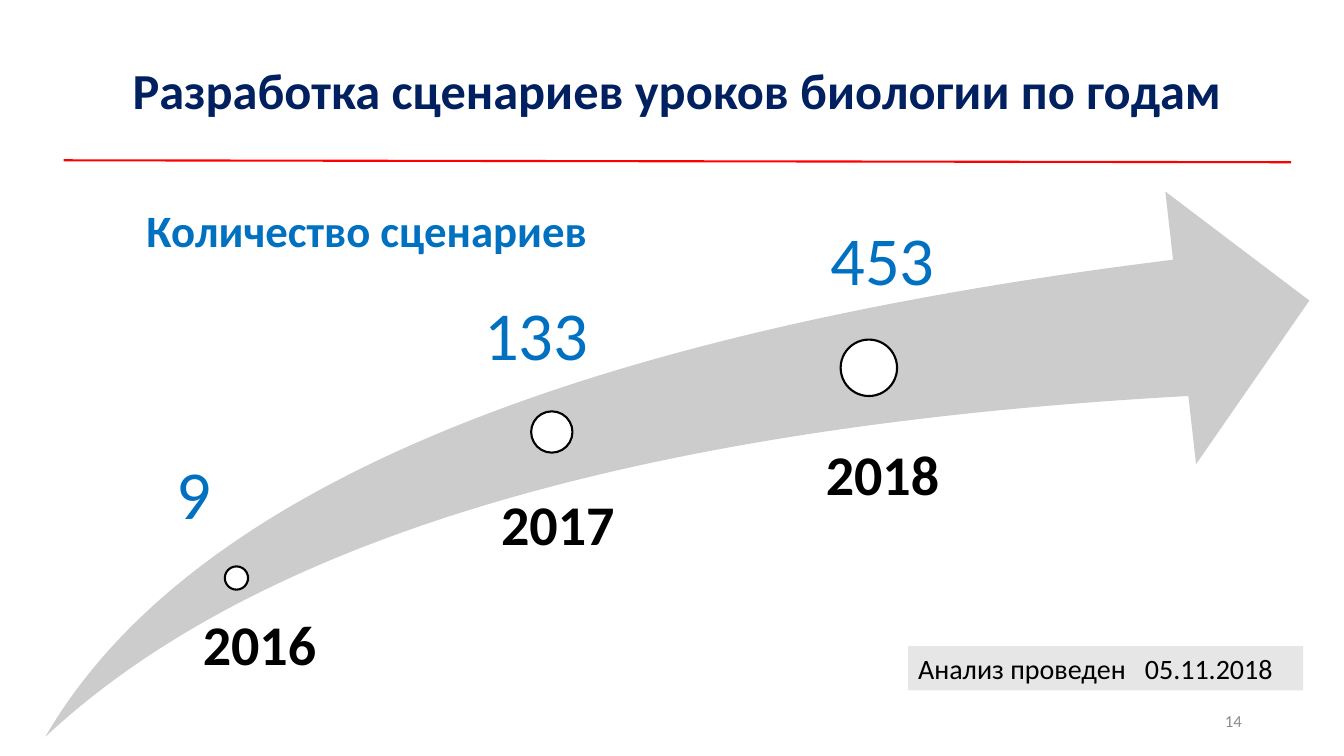
from dataclasses import dataclass

import pptx
import pptx.dml.color
import pptx.enum.shapes
import pptx.enum.text
import pptx.oxml.ns
import pptx.slide
import pptx.text.text
import pptx.util
from lxml import etree

Pt = pptx.util.Pt
RGB = pptx.dml.color.RGBColor
Shape = pptx.enum.shapes.MSO_SHAPE
Align = pptx.enum.text.PP_ALIGN
Anchor = pptx.enum.text.MSO_ANCHOR
qn = pptx.oxml.ns.qn


@dataclass(frozen=True)
class Theme:
    font: str = "Calibri"
    navy: str = "002060"
    blue: str = "0070C0"
    red: str = "FF0000"
    black: str = "000000"
    white: str = "FFFFFF"
    arrow: str = "CCCCCC"
    panel: str = "E7E6E6"
    muted: str = "8C8C8C"
    title: float = 36
    subtitle: float = 32
    count: float = 49
    year: float = 40
    note: float = 20
    number: float = 12
    outline: float = 1.5


@dataclass(frozen=True)
class Box:
    x: float
    y: float
    w: float
    h: float

    def emu(self) -> tuple:
        return Pt(self.x), Pt(self.y), Pt(self.w), Pt(self.h)


@dataclass(frozen=True)
class Style:
    size: float
    color: str
    bold: bool = False
    align: Align = Align.CENTER
    anchor: Anchor = Anchor.MIDDLE


@dataclass(frozen=True)
class Milestone:
    year: str
    count: str
    dot: Box
    count_box: Box
    count_inset: float
    year_box: Box


THEME = Theme()
TITLE = Style(THEME.title, THEME.navy, True, anchor=Anchor.TOP)
SUBTITLE = Style(THEME.subtitle, THEME.blue, True, anchor=Anchor.TOP)
COUNT = Style(THEME.count, THEME.blue)
YEAR = Style(THEME.year, THEME.black, True)
NOTE = Style(THEME.note, THEME.black, align=Align.LEFT, anchor=Anchor.TOP)
NUMBER = Style(THEME.number, THEME.muted, align=Align.RIGHT)

MILESTONES = [
    Milestone("2016", "9", Box(160.6, 404.6, 16.6, 16.6),
              Box(72, 326.9, 124.6, 56.2), 8.6, Box(125.3, 432, 120.2, 55.4)),
    Milestone("2017", "133", Box(379.4, 293.8, 29.5, 29.5),
              Box(292.3, 213.1, 165.6, 57.6), 15.8, Box(338.4, 346.3, 120.2, 55.4)),
    Milestone("2018", "453", Box(600.5, 242.6, 40.3, 40.3),
              Box(536.4, 160.6, 166.3, 54.7), 21.6, Box(579.6, 310.3, 101.5, 55.4)),
]


def write(tf: pptx.text.text.TextFrame, text: str, style: Style) -> None:
    tf.word_wrap = True
    tf.vertical_anchor = style.anchor
    p = tf.paragraphs[0]
    p.text = text
    p.alignment = style.align
    for r in p.runs:
        r.font.name = THEME.font
        r.font.size = Pt(style.size)
        r.font.bold = style.bold
        r.font.color.rgb = RGB.from_string(style.color)


def add_text(s: pptx.slide.Slide, box: Box, text: str, style: Style):
    tf = s.shapes.add_textbox(*box.emu()).text_frame
    write(tf, text, style)
    return tf


def add_shape(s: pptx.slide.Slide, kind: Shape, box: Box, fill: str, line: str = ""):
    sp = s.shapes.add_shape(kind, *box.emu())
    sp.shadow.inherit = False
    sp.fill.solid()
    sp.fill.fore_color.rgb = RGB.from_string(fill)
    if line:
        sp.line.color.rgb = RGB.from_string(line)
        sp.line.width = Pt(THEME.outline)
    else:
        sp.line.fill.background()
    return sp


def add_rule(s: pptx.slide.Slide) -> None:
    rule = s.shapes.add_connector(pptx.enum.shapes.MSO_CONNECTOR.STRAIGHT,
                                  Pt(45.4), Pt(114.5), Pt(922.3), Pt(115.9))
    rule.line.color.rgb = RGB.from_string(THEME.red)
    rule.line.width = Pt(THEME.outline)
    etree.SubElement(rule._element.spPr, qn("a:effectLst"))


def add_milestone(s: pptx.slide.Slide, m: Milestone) -> None:
    add_shape(s, Shape.OVAL, m.dot, THEME.white, THEME.black)
    tf = add_text(s, m.count_box, m.count, COUNT)
    tf.margin_left = Pt(m.count_inset)
    tf.margin_top = tf.margin_right = tf.margin_bottom = 0
    tf.paragraphs[0].line_spacing = 0.9
    add_text(s, m.year_box, m.year, YEAR)


def add_note(s: pptx.slide.Slide) -> None:
    sp = add_shape(s, Shape.RECTANGLE, Box(648.7, 461.5, 282.2, 31.7), THEME.panel)
    pPr = sp.text_frame.paragraphs[0]._p.get_or_add_pPr()
    tabs = etree.SubElement(pPr, qn("a:tabLst"))
    etree.SubElement(tabs, qn("a:tab"), pos=str(Pt(162)), algn="l")
    write(sp.text_frame, "Анализ проведен\t05.11.2018", NOTE)


def main() -> None:
    prs = pptx.Presentation()
    prs.slide_width, prs.slide_height = Pt(960), Pt(540)
    s = prs.slides.add_slide(prs.slide_layouts[6])
    add_rule(s)
    add_text(s, Box(44.6, 38.9, 878.4, 51.1), "Разработка сценариев уроков биологии по годам", TITLE)
    arrow = add_shape(s, Shape.SWOOSH_ARROW, Box(32.4, 136.8, 902.9, 389.5), THEME.arrow)
    arrow.adjustments[0] = arrow.adjustments[1] = 0.25
    for m in MILESTONES:
        add_milestone(s, m)
    add_text(s, Box(678.2, 500.4, 216, 28.8), "14", NUMBER)
    add_note(s)
    add_text(s, Box(64.8, 141.1, 394.6, 46.1), "Количество сценариев", SUBTITLE)
    prs.save("out.pptx")


if __name__ == "__main__":
    main()
